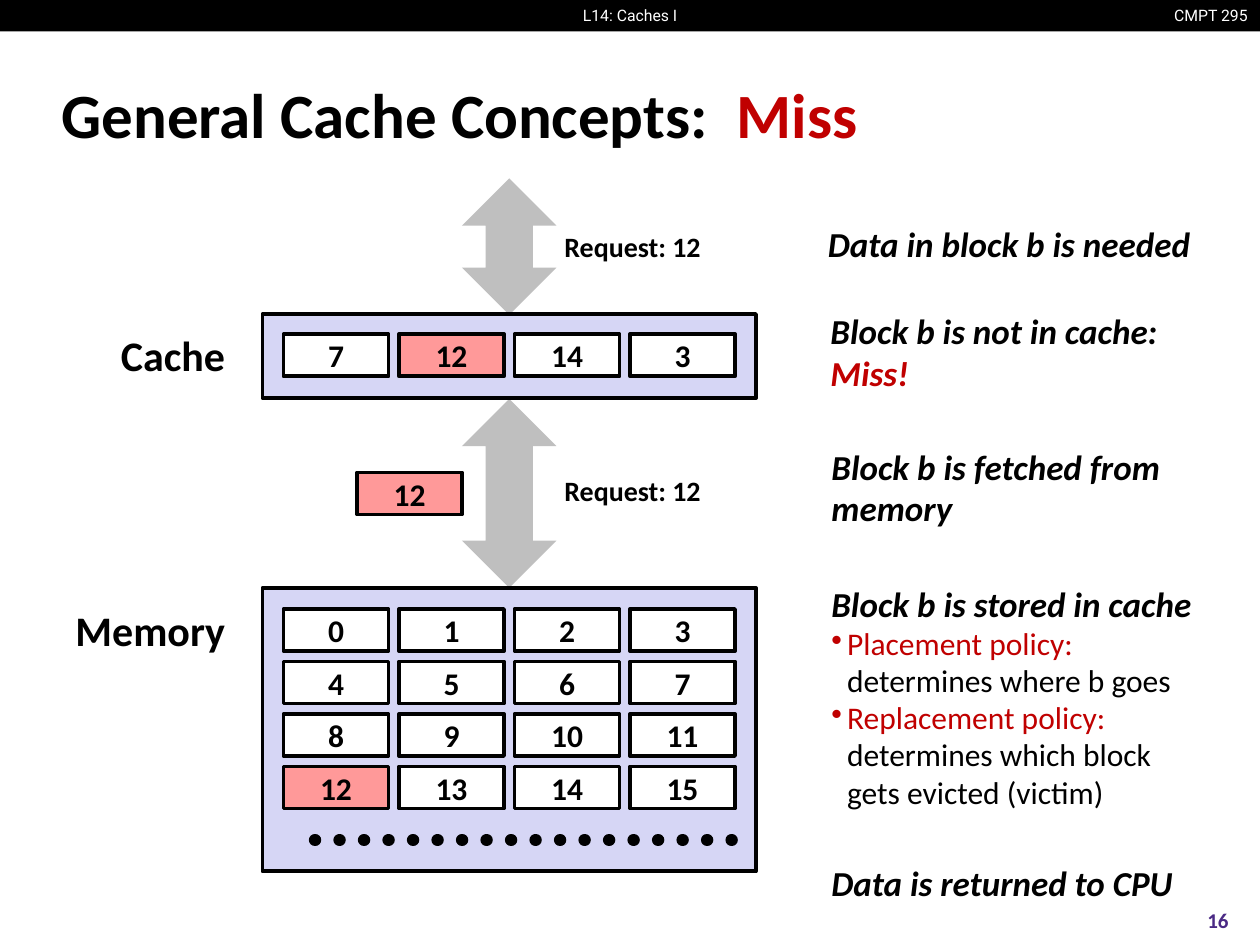
import pptx
import pptx.util
import pptx.dml.color
import pptx.enum.dml
import pptx.enum.shapes
import pptx.enum.text
import lxml.etree

Pt = pptx.util.Pt
Align = pptx.enum.text.PP_ALIGN
Anchor = pptx.enum.text.MSO_ANCHOR
Shape = pptx.enum.shapes.MSO_SHAPE

# Content: (text, colour) spans make a paragraph
BLACK, WHITE, RED, PINK = "000000", "FFFFFF", "C00000", "FF9999"
LILAC, GREY, PURPLE = "D6D6F5", "BFBFBF", "4B2A85"
TITLE = [("General Cache Concepts:  ", BLACK), ("Miss", RED)]
CACHE = [[7, 12, 14, 3]]
MEMORY = [[4 * row + column for column in range(4)] for row in range(4)]
REQUESTED = 12
PANELS = [(336, 162), (179.5, 48)]  # top, height
ARROWS = [(102, 78), (228, 108)]
LABELS = [  # text, box, size, font, colour, alignment
    ("CMPT 295", (662, 0, 58, 18), 9, "Roboto", WHITE, Align.RIGHT),
    ("L14: Caches I", (324.5, 0, 71, 18), 9, "Roboto", WHITE, Align.CENTER),
    ("16", (672, 511, 48, 29), 12, "Calibri", PURPLE, Align.CENTER),
    ("Cache", (62, 185, 75, 36), 24, "Calibri", BLACK, Align.LEFT),
    ("Memory", (36, 342, 101, 36), 24, "Calibri", BLACK, Align.LEFT),
    ("Request: 12", (314.5, 127.5, 94, 26.5), 16, "Calibri", BLACK, Align.CENTER),
    ("Request: 12", (314.5, 267, 94, 26.5), 16, "Calibri", BLACK, Align.CENTER),
]
STEPS = [  # box, headings, bullets
    ((466, 124.5, 222, 31), [("Data in block b is needed", BLACK)], []),
    ((467.5, 174.5, 202, 54.5),
     [("Block b is not in cache:", BLACK), ("Miss!", RED)], []),
    ((468, 252, 204, 54.5),
     [("Block b is fetched from", BLACK), ("memory", BLACK)], []),
    ((468, 330, 221, 138), [("Block b is stored in cache", BLACK)],
     [("Placement policy:", ["determines where b goes"]),
      ("Replacement policy:", ["determines which block", "gets evicted (victim)"])]),
    ((468, 489.5, 210, 31), [("Data is returned to CPU", BLACK)], []),
]


def rgb(value):
    return pptx.dml.color.RGBColor.from_string(value)


def style(font, size, color, bold=True, italic=False, name="Calibri"):
    font.name, font.size, font.bold, font.italic = name, Pt(size), bold, italic
    font.color.rgb = rgb(color)


def add_span(para, text, color):
    span = para.add_run()
    span.text = text
    span.font.color.rgb = rgb(color)


def hang(para, indent, bullet=None):
    properties = para._p.get_or_add_pPr()
    properties.set("marL", str(Pt(indent)))
    properties.set("indent", str(-Pt(indent)))
    if bullet:
        mark = lxml.etree.Element(
            "{http://schemas.openxmlformats.org/drawingml/2006/main}buChar", char=bullet)
        default = properties.find(pptx.oxml.ns.qn("a:defRPr"))
        default.addprevious(mark)


def add_shape(kind, bounds, fill, outlined=True):
    shape = page.shapes.add_shape(kind, *map(Pt, bounds))
    shape.shadow.inherit = False
    shape.fill.solid()
    shape.fill.fore_color.rgb = rgb(fill)
    if outlined:
        shape.line.color.rgb = rgb(BLACK)
        shape.line.width = Pt(2.25)
    else:
        shape.line.fill.background()
    return shape


def add_text(bounds, anchor=Anchor.TOP, wrap=False):
    frame = page.shapes.add_textbox(*map(Pt, bounds)).text_frame
    frame.word_wrap = wrap
    frame.vertical_anchor = anchor
    return frame


def add_block(number, left, top):
    block = add_shape(Shape.RECTANGLE, (left, top, 60, 24),
                      PINK if number == REQUESTED else WHITE)
    frame = block.text_frame
    frame.vertical_anchor = Anchor.MIDDLE
    para = frame.paragraphs[0]
    para.text, para.alignment = str(number), Align.CENTER
    style(para.font, 18, BLACK)


def add_grid(rows, top):
    for row, numbers in enumerate(rows):
        for column, number in enumerate(numbers):
            add_block(number, 162 + 66 * column, top + 30 * row)


deck = pptx.Presentation()
deck.slide_width, deck.slide_height = Pt(720), Pt(540)
page = deck.slides.add_slide(deck.slide_layouts[5])

# Header bar and title
add_shape(Shape.RECTANGLE, (0, 0, 720, 18), BLACK, outlined=False)
title = page.shapes.title
title.left, title.top, title.width, title.height = map(Pt, (28, 34.5, 662, 60))
title.text_frame.vertical_anchor = Anchor.MIDDLE
heading = title.text_frame.paragraphs[0]
heading.alignment = Align.LEFT
style(heading.font, 36, BLACK)
hang(heading, 9)
for text, color in TITLE:
    add_span(heading, text, color)

# Arrows, panels and blocks
for top, height in ARROWS:
    add_shape(Shape.UP_DOWN_ARROW, (264, top, 54, height), GREY, outlined=False)
for top, height in PANELS:
    add_shape(Shape.RECTANGLE, (150, top, 282, height), LILAC)
add_grid(MEMORY, 348)
add_grid(CACHE, 191)
add_block(REQUESTED, 204, 270)

# Dotted line: memory goes on
dots = page.shapes.add_connector(
    pptx.enum.shapes.MSO_CONNECTOR.STRAIGHT, Pt(180), Pt(480), Pt(420), Pt(480))
dots.line.color.rgb = rgb(BLACK)
dots.line.width = Pt(7)
dots.line.dash_style = pptx.enum.dml.MSO_LINE.ROUND_DOT
dots.line._ln.set("cap", "rnd")
lxml.etree.SubElement(dots._element.spPr, pptx.oxml.ns.qn("a:effectLst"))

# Labels
for text, bounds, size, name, color, alignment in LABELS:
    is_number = color == PURPLE
    frame = add_text(bounds, Anchor.MIDDLE if is_number else Anchor.TOP, is_number)
    para = frame.paragraphs[0]
    para.text, para.alignment = text, alignment
    style(para.font, size, color, bold=name == "Calibri", name=name)

# Steps on the right
for bounds, headings, bullets in STEPS:
    frame = add_text(bounds, Anchor.MIDDLE)
    for index, (text, color) in enumerate(headings):
        para = frame.add_paragraph() if index else frame.paragraphs[0]
        para.text, para.line_spacing = text, 0.98
        style(para.font, 20, color, italic=True)
    for term, lines in bullets:
        para = frame.add_paragraph()
        para.line_spacing = 0.98
        style(para.font, 18, RED, bold=False)
        hang(para, 9, "•")
        add_span(para, term, RED)
        for line in lines:
            para.add_line_break()
            add_span(para, line, BLACK)

deck.save("out.pptx")
